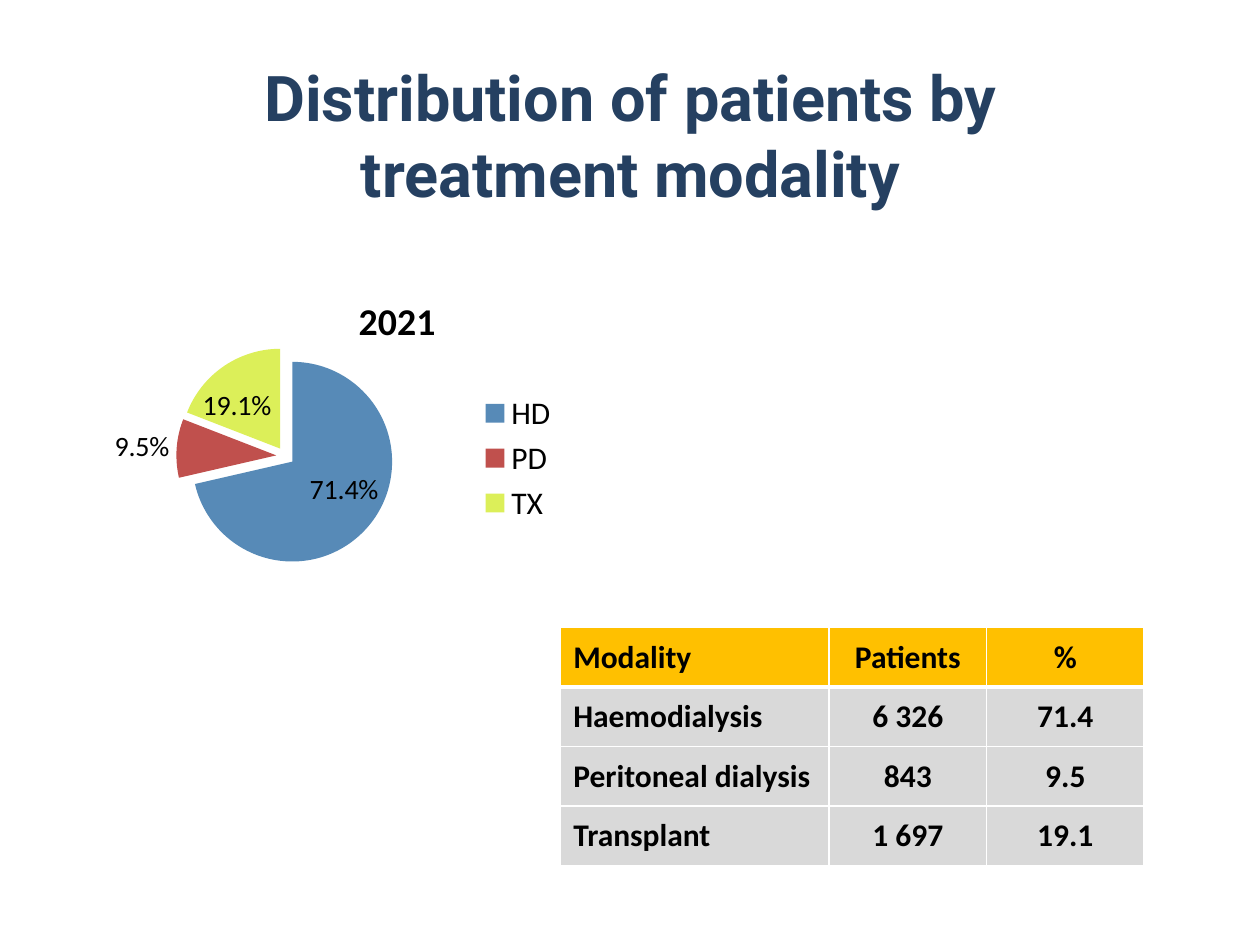
from lxml.etree import SubElement
from pptx import Presentation
from pptx.chart.data import CategoryChartData
from pptx.dml.color import RGBColor
from pptx.enum.chart import XL_CHART_TYPE as ChartType, XL_LABEL_POSITION as LabelPosition
from pptx.enum.chart import XL_LEGEND_POSITION as LegendPosition
from pptx.enum.text import MSO_ANCHOR as Anchor, PP_ALIGN as Align
from pptx.oxml import parse_xml
from pptx.oxml.ns import nsdecls, qn
from pptx.util import Inches, Pt

MODALITIES = [
    ("HD", "Haemodialysis", "6 326", 71.4, "578AB7"),
    ("PD", "Peritoneal dialysis", "843", 9.5, "C0504D"),
    ("TX", "Transplant", "1 697", 19.1, "DCEF59"),
]


def colour(value):
    return RGBColor.from_string(value)


def inches(box):
    return [Inches(length) for length in box]


def style(font, size, face="Calibri", shade="000000", bold=False):
    font.size, font.name, font.bold = Pt(size), face, bold
    font.color.rgb = colour(shade)


def add_title(page, box):
    title = page.shapes.title
    title.left, title.top, title.width, title.height = inches(box)
    title.text_frame.vertical_anchor = Anchor.MIDDLE
    para = title.text_frame.paragraphs[0]
    para.alignment = Align.CENTER
    span = para.add_run()
    span.text = "Distribution of patients by treatment modality"
    style(span.font, 36, "Roboto", "254061", True)


def place_part(element, after, **shares):
    """Fix a chart part at the given shares of the chart's size."""
    for old in element.findall(qn("c:layout")):
        element.remove(old)
    layout = parse_xml(f"<c:layout {nsdecls('c')}/>")
    manual = SubElement(layout, qn("c:manualLayout"))
    if "w" in shares:
        SubElement(manual, qn("c:layoutTarget")).set("val", "inner")
    for side in "xy":
        SubElement(manual, qn(f"c:{side}Mode")).set("val", "edge")
    for name, share in shares.items():
        SubElement(manual, qn(f"c:{name}")).set("val", str(share))
    if after:
        element.find(qn(after)).addnext(layout)
    else:
        element.insert(0, layout)


def add_pie(page, box):
    data = CategoryChartData(number_format='0.0"%"')
    data.categories = [row[0] for row in MODALITIES]
    data.add_series("Series 1", [row[3] for row in MODALITIES])
    chart = page.shapes.add_chart(ChartType.PIE, *inches(box), data).chart
    style(chart.font, 18)

    chart.has_title = True
    span = chart.chart_title.text_frame.paragraphs[0].add_run()
    span.text = "2021"
    style(span.font, 21.6, bold=True)
    place_part(chart.chart_title._element, "c:tx", x=0.54, y=0.18)

    chart.has_legend = True
    chart.legend.position = LegendPosition.RIGHT
    chart.legend.include_in_layout = False
    style(chart.legend.font, 18)
    place_part(chart.legend._element, "c:legendPos", x=0.74, y=0.42, w=0.15, h=0.34)

    plot = chart.plots[0]
    plot.vary_by_categories = True
    place_part(plot._element.getparent(), None, x=0.25, y=0.32, w=0.36, h=0.53)
    series = plot.series[0]
    for index, row in enumerate(MODALITIES):
        fill = series.points[index].format.fill
        fill.solid()
        fill.fore_color.rgb = colour(row[4])
    explosion = parse_xml(f'<c:explosion {nsdecls("c")} val="9"/>')
    series._element.find(qn("c:dPt")).addprevious(explosion)

    labels = series.data_labels
    labels.show_value = True
    labels.number_format, labels.number_format_is_linked = '0.0"%"', False
    labels.position = LabelPosition.BEST_FIT
    style(labels.font, 16)


def set_borders(cell, **widths):
    """Draw white cell borders, with widths in points by side letter."""
    properties = cell._tc.get_or_add_tcPr()
    for index, side in enumerate("LRTB"):
        line = parse_xml(
            f'<a:ln{side} {nsdecls("a")} w="{Pt(widths.get(side, 1))}"><a:solidFill>'
            f'<a:srgbClr val="FFFFFF"/></a:solidFill></a:ln{side}>')
        properties.insert(index, line)


def add_table(page, box):
    rows = [("Modality", "Patients", "%")]
    rows += [(name, patients, str(share)) for _, name, patients, share, _ in MODALITIES]
    table = page.shapes.add_table(len(rows), 3, *inches(box)).table
    for column, width in zip(table.columns, (2.13, 1.25, 1.25)):
        column.width = Inches(width)
    for r, row in enumerate(rows):
        for c, text in enumerate(row):
            cell = table.cell(r, c)
            cell.vertical_anchor = Anchor.MIDDLE
            cell.fill.solid()
            cell.fill.fore_color.rgb = colour("D9D9D9" if r else "FFC000")
            set_borders(cell, **({"T": 3} if r == 1 else {"B": 3} if r == 0 else {}))
            para = cell.text_frame.paragraphs[0]
            para.alignment = Align.CENTER if c else Align.LEFT
            span = para.add_run()
            span.text = text
            style(span.font, 18, bold=True)


def main():
    deck = Presentation()
    deck.slide_width, deck.slide_height = Inches(10), Inches(7.5)
    page = deck.slides.add_slide(deck.slide_layouts[5])
    add_title(page, (1.06, 0.44, 7.89, 1.25))
    add_table(page, (4.45, 4.98, 4.63, 1.89))
    add_pie(page, (0.2, 1.69, 4.8, 3.3))
    deck.save("out.pptx")


if __name__ == "__main__":
    main()
